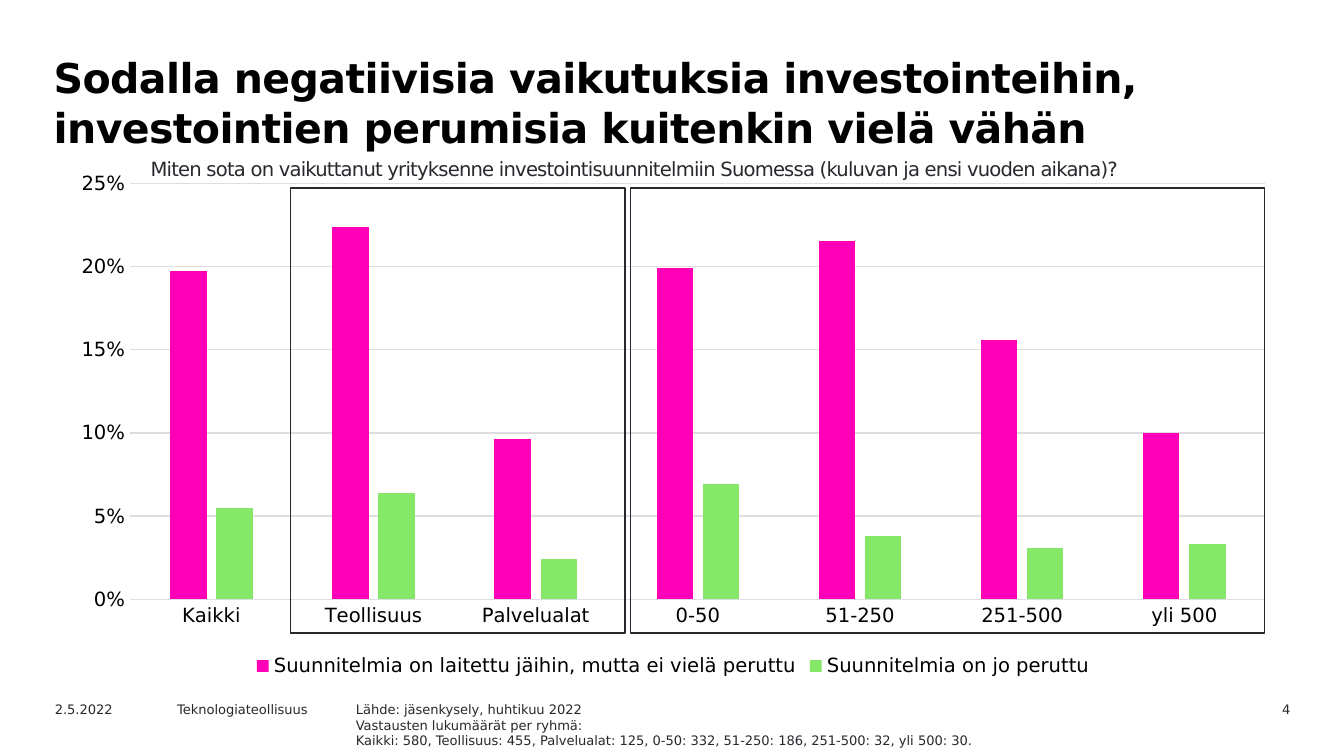
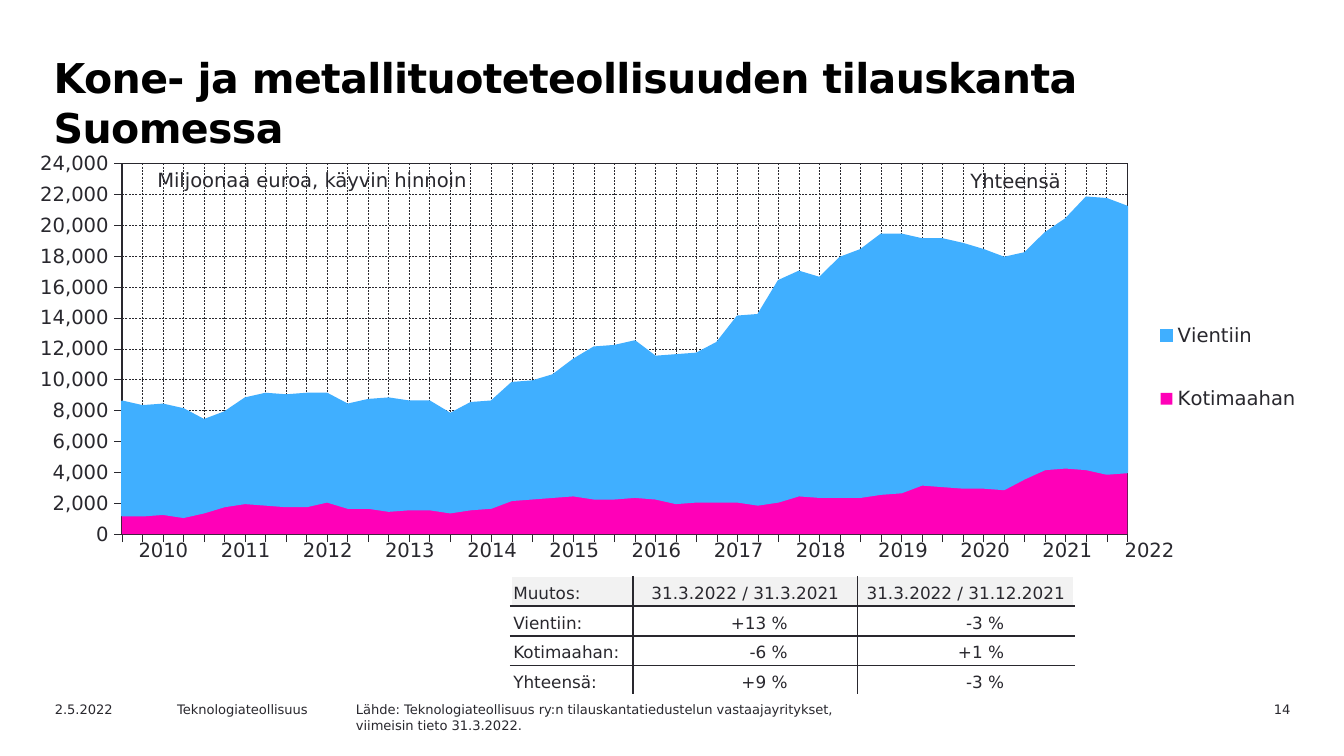
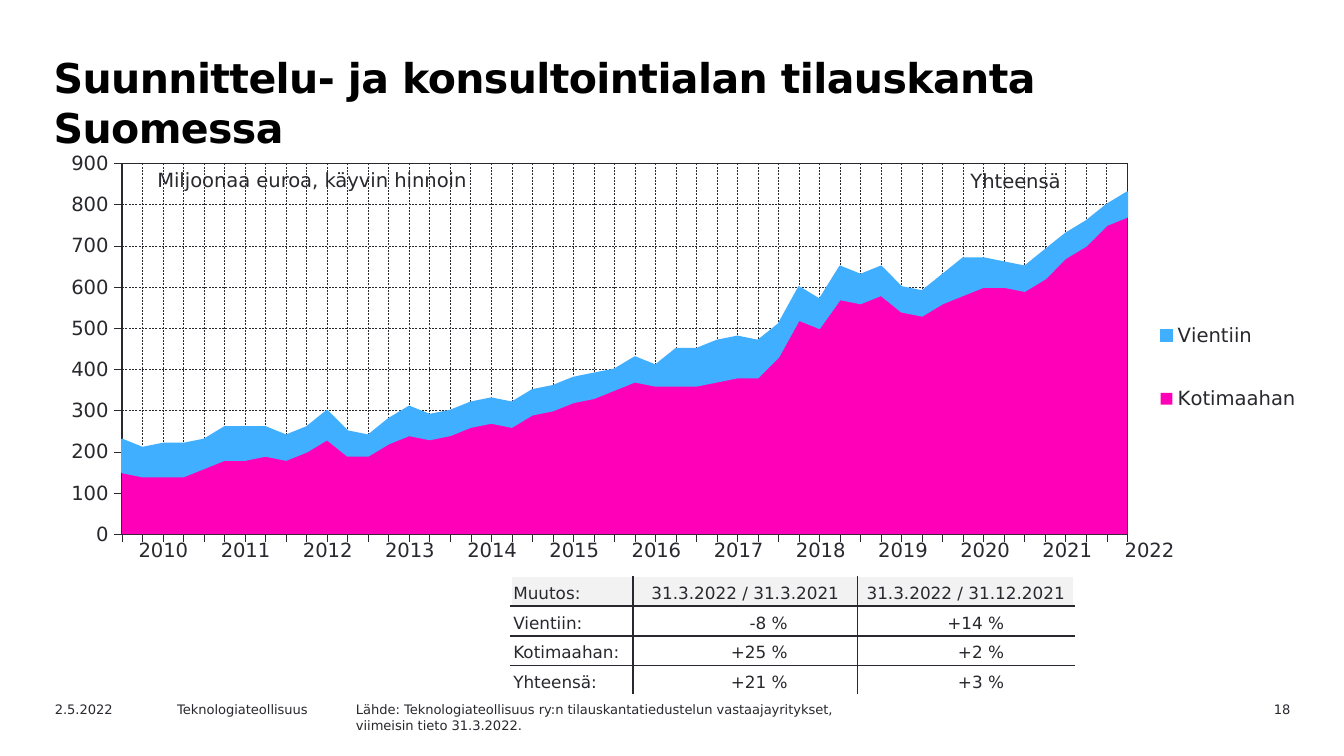
from lxml import etree
from pptx import Presentation
from pptx.chart.data import CategoryChartData
from pptx.dml.color import RGBColor
from pptx.enum import chart as charts, dml, shapes, text
from pptx.oxml import ns
from pptx.util import Pt

COLORS = {
    "ink": "29282E", "title": "000000", "grid": "DEDDE1", "header": "F2F2F2",
    "white": "FFFFFF", "pink": "FF00B8", "green": "85E869", "blue": "40AFFF",
}
FONT = "DejaVu Sans"
NO_GRID_STYLE = "{2D5ABB26-0587-4C30-8999-92F81FD0307C}"
RIGHT, CENTER = text.PP_ALIGN.RIGHT, text.PP_ALIGN.CENTER

DATE = "2.5.2022"
PUBLISHER = "Teknologiateollisuus"
ORDER_SOURCE = [
    "Lähde: Teknologiateollisuus ry:n tilauskantatiedustelun vastaajayritykset,",
    "viimeisin tieto 31.3.2022.",
]
YEARS = [str(year) for year in range(2010, 2023)]
QUARTERS = [str(number) for number in range(1, 51)]
CHANGE_HEADER = ["Muutos:", "31.3.2022 / 31.3.2021", "31.3.2022 / 31.12.2021"]
CHANGE_WIDTHS = [65.5, 120.2, 116]

SURVEY = {
    "title": "Sodalla negatiivisia vaikutuksia investointeihin, "
             "investointien perumisia kuitenkin vielä vähän",
    "number": 4,
    "source": [
        "Lähde: jäsenkysely, huhtikuu 2022",
        "Vastausten lukumäärät per ryhmä:",
        "Kaikki: 580, Teollisuus: 455, Palvelualat: 125, 0-50: 332, "
        "51-250: 186, 251-500: 32, yli 500: 30.",
    ],
    "question": "Miten sota on vaikuttanut yrityksenne investointisuunnitelmiin "
                "Suomessa (kuluvan ja ensi vuoden aikana)?",
    "groups": ["Kaikki", "Teollisuus", "Palvelualat", "0-50", "51-250", "251-500", "yli 500"],
    "series": [
        ("Suunnitelmia on laitettu jäihin, mutta ei vielä peruttu", "pink",
         [0.197, 0.224, 0.096, 0.199, 0.215, 0.156, 0.1]),
        ("Suunnitelmia on jo peruttu", "green",
         [0.055, 0.064, 0.024, 0.069, 0.038, 0.031, 0.033]),
    ],
    "frames": [(155.5, 179.3), (337.7, 339.8)],
}

ORDER_BOOKS = [
    {
        "title": "Kone- ja metallituoteteollisuuden tilauskanta Suomessa",
        "number": 14,
        "scale": (24000, 2000),
        "domestic": [
            1200, 1200, 1300, 1100, 1400, 1800, 2000, 1900, 1800, 1800,
            2100, 1700, 1700, 1500, 1600, 1600, 1400, 1600, 1700, 2200,
            2300, 2400, 2500, 2300, 2300, 2400, 2300, 2000, 2100, 2100,
            2100, 1900, 2100, 2500, 2400, 2400, 2400, 2600, 2700, 3200,
            3100, 3000, 3000, 2900, 3600, 4200, 4300, 4200, 3900, 4000],
        "export": [
            7400, 7100, 7100, 7000, 6000, 6100, 6800, 7200, 7200, 7300,
            7000, 6700, 7000, 7300, 7000, 7000, 6400, 6900, 6900, 7600,
            7600, 7900, 8800, 9800, 9900, 10100, 9200, 9600, 9600, 10300,
            12000, 12300, 14300, 14500, 14200, 15500, 16000, 16800, 16700, 15900,
            16000, 15800, 15400, 15000, 14600, 15300, 16100, 17600, 17800, 17200],
        "changes": [
            ["Vientiin:", "+13 %", "-3 %"],
            ["Kotimaahan:", "-6 %", "+1 %"],
            ["Yhteensä:", "+9 %", "-3 %"],
        ],
    },
    {
        "title": "Suunnittelu- ja konsultointialan tilauskanta Suomessa",
        "number": 18,
        "scale": (900, 100),
        "domestic": [
            150, 140, 140, 140, 160, 180, 180, 190, 180, 200,
            230, 190, 190, 220, 240, 230, 240, 260, 270, 260,
            290, 300, 320, 330, 350, 370, 360, 360, 360, 370,
            380, 380, 430, 520, 500, 570, 560, 580, 540, 530,
            560, 580, 600, 600, 590, 620, 670, 700, 750, 770],
        "export": [
            80, 70, 80, 80, 70, 80, 80, 70, 60, 60,
            70, 60, 50, 60, 70, 60, 60, 60, 60, 60,
            60, 60, 60, 60, 50, 60, 50, 90, 90, 100,
            100, 90, 80, 80, 70, 80, 70, 70, 60, 60,
            70, 90, 70, 60, 60, 70, 60, 60, 50, 60],
        "changes": [
            ["Vientiin:", "-8 %", "+14 %"],
            ["Kotimaahan:", "+25 %", "+2 %"],
            ["Yhteensä:", "+21 %", "+3 %"],
        ],
    },
]


def rgb(name):
    return RGBColor.from_string(COLORS[name])


def points(*values):
    return [Pt(value) for value in values]


def set_font(font, size, color="ink", bold=False, name=FONT):
    font.name, font.size, font.bold = name, Pt(size), bold
    font.color.rgb = rgb(color)


def set_line(line, color, width, dash=None):
    line.color.rgb = rgb(color)
    line.width = Pt(width)
    if dash:
        line.dash_style = dash


def write(frame, content, size=10.5, color="ink", bold=False, align=None,
          leading=None, tracking=0):
    """Fill a text frame, one paragraph for each string of content."""
    lines = [content] if isinstance(content, str) else content
    for index, line in enumerate(lines):
        para = frame.add_paragraph() if index else frame.paragraphs[0]
        para.alignment = align
        if leading:
            para.line_spacing = Pt(leading)
        span = para.add_run()
        span.text = line
        set_font(span.font, size, color, bold)
        if tracking:
            span.font._element.set("spc", str(round(tracking * 100)))


def set_margins(target, margins):
    (target.margin_left, target.margin_top,
     target.margin_right, target.margin_bottom) = points(*margins)


def add_text(page, content, place, margins=(7.2, 3.6, 7.2, 3.6), wrap=True, **style):
    frame = page.shapes.add_textbox(*points(*place)).text_frame
    frame.word_wrap = wrap
    set_margins(frame, margins)
    write(frame, content, **style)


def add_page(deck, content, source, source_size):
    """Add a slide with its title and footer row."""
    page = deck.slides.add_slide(deck.slide_layouts[6])
    add_text(page, content["title"], (20.2, 22.3, 629.3, 51.1), margins=(8.6, 5, 7.2, 3.6),
             size=22, color="title", bold=True, leading=27, tracking=-0.3)
    footers = [
        (DATE, (22.3, 72, 13), None),
        (PUBLISHER, (87.8, 102.2, 13), None),
        (source, (183.6, *source_size), None),
        (str(content["number"]), (630.7, 67.7, 13), RIGHT),
    ]
    for words, (left, width, height), align in footers:
        add_text(page, words, (left, 372.2, width, height), size=7, align=align)
    return page


def set_layout(parent, x, y, w, h, inner=False):
    """Fix the place of a plot area or legend as fractions of the chart."""
    for old in parent.findall(ns.qn("c:layout")):
        parent.remove(old)
    layout = etree.Element(ns.qn("c:layout"))
    manual = etree.SubElement(layout, ns.qn("c:manualLayout"))
    settings = [("layoutTarget", "inner")] if inner else []
    settings += [("xMode", "edge"), ("yMode", "edge"), ("x", x), ("y", y), ("w", w), ("h", h)]
    for tag, value in settings:
        etree.SubElement(manual, ns.qn("c:" + tag)).set("val", str(value))
    position = parent.find(ns.qn("c:legendPos"))
    if position is None:
        parent.insert(0, layout)
    else:
        position.addnext(layout)


def add_chart(page, kind, place, categories, series, number_format, scale, layout, legend):
    data = CategoryChartData(number_format=number_format)
    data.categories = categories
    for name, _, values in series:
        data.add_series(name, values)
    chart = page.shapes.add_chart(kind, *points(*place), data).chart
    chart.has_title = False
    chart.plots[0].vary_by_categories = False
    for item, (_, color, _) in zip(chart.plots[0].series, series):
        item.format.fill.solid()
        item.format.fill.fore_color.rgb = rgb(color)
    axis = chart.value_axis
    axis.minimum_scale = 0
    axis.maximum_scale, axis.major_unit = scale
    axis.tick_labels.number_format = number_format
    axis.tick_labels.number_format_is_linked = False
    chart.has_legend = True
    chart.legend.position = legend
    chart.legend.include_in_layout = False
    set_layout(chart._chartSpace.chart.plotArea, *layout, inner=True)
    return chart


def add_survey_chart(page, survey):
    chart = add_chart(page, charts.XL_CHART_TYPE.COLUMN_CLUSTERED, (30.2, 87.1, 661, 278.6),
                      survey["groups"], survey["series"], "0%", (0.25, 0.05),
                      (0.06, 0.04, 0.92, 0.8), charts.XL_LEGEND_POSITION.BOTTOM)
    set_font(chart.font, 10)
    set_font(chart.legend.font, 10.5, "title")
    chart.plots[0].gap_width, chart.plots[0].overlap = 219, -27
    for axis in (chart.category_axis, chart.value_axis):
        axis.major_tick_mark = charts.XL_TICK_MARK.NONE
        set_font(axis.tick_labels.font, 10.5, "title")
    set_line(chart.category_axis.format.line, "grid", 0.75)
    chart.value_axis.format.line.fill.background()
    set_line(chart.value_axis.major_gridlines.format.line, "grid", 0.75)


def add_order_chart(page, book):
    series = [("Kotimaahan", "pink", book["domestic"]), ("Vientiin", "blue", book["export"])]
    chart = add_chart(page, charts.XL_CHART_TYPE.AREA_STACKED, (14.4, 79.9, 697.7, 224.6),
                      QUARTERS, series, "#,##0", book["scale"],
                      (0.073, 0.034, 0.772, 0.885), charts.XL_LEGEND_POSITION.RIGHT)
    set_font(chart.font, 18.2, bold=True, name="Arial")
    set_font(chart.legend.font, 10.5)
    set_layout(chart.legend._element, 0.85, 0.32, 0.145, 0.4)
    set_line(chart.plots[0].series[1].format.line, "blue", 0.88)
    for axis in (chart.category_axis, chart.value_axis):
        axis.has_major_gridlines = True
        axis.major_tick_mark = charts.XL_TICK_MARK.OUTSIDE
        set_line(axis.format.line, "ink", 0.22)
        set_line(axis.major_gridlines.format.line, "ink", 0.25, dml.MSO_LINE.DASH)
    chart.category_axis.tick_label_position = charts.XL_TICK_LABEL_POSITION.NONE
    set_font(chart.value_axis.tick_labels.font, 10.5)
    plot_area = chart._chartSpace.chart.plotArea
    for crossing in plot_area.iter(ns.qn("c:crossBetween")):
        crossing.set("val", "midCat")
    border = etree.SubElement(plot_area, ns.qn("c:spPr"))
    etree.SubElement(border, ns.qn("a:noFill"))
    add_border(border, "ln", "ink", 0.75)


def add_border(parent, tag, color, width):
    line = etree.SubElement(parent, ns.qn("a:" + tag), w=str(Pt(width)))
    fill = etree.SubElement(line, ns.qn("a:solidFill"))
    etree.SubElement(fill, ns.qn("a:srgbClr"), val=COLORS[color])
    return line


def add_table(page, place, rows, widths):
    frame = page.shapes.add_table(len(rows), len(widths), *points(*place))
    table = frame.table
    table.first_row = table.horz_banding = False
    table._tbl.tblPr.find(ns.qn("a:tableStyleId")).text = NO_GRID_STYLE
    for column, width in zip(table.columns, widths):
        column.width = Pt(width)
    for row in table.rows:
        row.height = Pt(place[3] / len(rows))
    return table


def add_change_table(page, changes):
    rows = [CHANGE_HEADER] + changes
    table = add_table(page, (273.6, 308.9, 301.7, 63.4), rows, CHANGE_WIDTHS)
    last_row, last_column = len(rows) - 1, len(CHANGE_WIDTHS) - 1
    for r, row in enumerate(rows):
        for c, words in enumerate(row):
            cell = table.cell(r, c)
            is_value = r > 0 and c > 0
            align = RIGHT if is_value else CENTER if c else None
            set_margins(cell, (1.4, 1.4, 37.4 if is_value else 1.4, 1.4))
            cell.vertical_anchor = text.MSO_ANCHOR.BOTTOM
            write(cell.text_frame, words, size=9, align=align)
            properties = cell._tc.get_or_add_tcPr()
            outer_edges = [("lnL", c == 0), ("lnR", c == last_column),
                           ("lnT", r == 0), ("lnB", r == last_row)]
            for tag, is_outer in outer_edges:
                add_border(properties, tag, "white" if is_outer else "ink", 1)
            if r in (0, last_row):
                cell.fill.solid()
                cell.fill.fore_color.rgb = rgb("white" if r else "header")
            else:
                cell.fill.background()


def add_year_row(page):
    table = add_table(page, (65.5, 285.1, 572.4, 22.3), [YEARS], [44.03] * len(YEARS))
    for cell, year in zip(table.rows[0].cells, YEARS):
        cell.fill.background()
        set_margins(cell, (7.2, 3.6, 7.2, 3.6))
        write(cell.text_frame, year, align=CENTER)


def add_survey_page(deck, survey):
    page = add_page(deck, survey, survey["source"], (499.7, 28.8))
    add_survey_chart(page, survey)
    for left, width in survey["frames"]:
        box = page.shapes.add_shape(shapes.MSO_SHAPE.RECTANGLE,
                                    *points(left, 100.8, width, 238.3))
        box.shadow.inherit = False
        box.fill.background()
        set_line(box.line, "ink", 0.75)
    add_text(page, survey["question"], (77.8, 81.4, 612, 18.7),
             margins=(2.9, 2.9, 2.9, 2.9), tracking=-0.4)


def add_order_page(deck, book):
    page = add_page(deck, book, ORDER_SOURCE, (360, 18.7))
    add_order_chart(page, book)
    add_text(page, "Miljoonaa euroa, käyvin hinnoin", (77.8, 86.4, 187.2, 19.4),
             margins=(6.5, 3.6, 6.5, 3.6), wrap=False)
    add_change_table(page, book["changes"])
    add_text(page, "Yhteensä", (513.4, 87.8, 76.3, 19.4), margins=(6.5, 2.9, 6.5, 2.9))
    add_year_row(page)


def main():
    deck = Presentation()
    deck.slide_width, deck.slide_height = points(720, 405)
    add_survey_page(deck, SURVEY)
    for book in ORDER_BOOKS:
        add_order_page(deck, book)
    deck.save("out.pptx")


if __name__ == "__main__":
    main()
